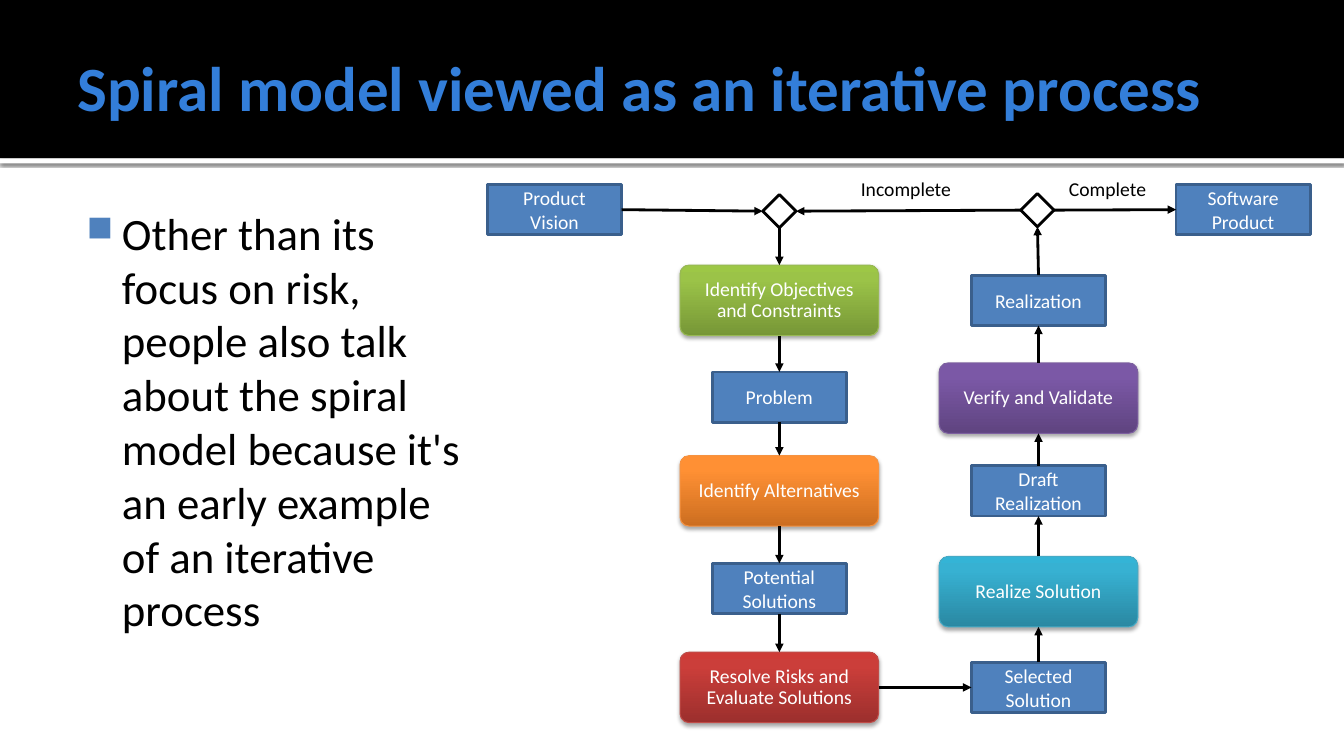
from copy import deepcopy

from lxml import etree
from pptx import Presentation
from pptx.dml.color import RGBColor
from pptx.enum.shapes import MSO_CONNECTOR, MSO_SHAPE
from pptx.enum.text import MSO_ANCHOR, PP_ALIGN
from pptx.oxml.ns import qn
from pptx.util import Inches, Pt

RECTANGLE = MSO_SHAPE.RECTANGLE
ROUNDED = MSO_SHAPE.ROUNDED_RECTANGLE
DECISION = MSO_SHAPE.FLOWCHART_DECISION
STRAIGHT = MSO_CONNECTOR.STRAIGHT
MIDDLE = MSO_ANCHOR.MIDDLE
TOP_ANCHOR = MSO_ANCHOR.TOP
CENTER = PP_ALIGN.CENTER
LEFT_ALIGN = PP_ALIGN.LEFT

BLACK = RGBColor(0x00, 0x00, 0x00)
WHITE = RGBColor(0xFF, 0xFF, 0xFF)
TITLE_BLUE = RGBColor(0x33, 0x7E, 0xD9)
STATE_BLUE = RGBColor(0x4F, 0x81, 0xBD)
STATE_EDGE = RGBColor(0x3A, 0x5F, 0x8C)


def palette(*codes):
    return [RGBColor.from_string(code) for code in codes]


GREEN = palette("779737", "9BC348", "9DC746", "98B955")
ORANGE = palette("CC6E20", "FF9034", "FF9136", "F69240")
RED = palette("9C2F2D", "CB3E3A", "CE3B37", "BF4C48")
TEAL = palette("2A88A2", "37B1D2", "34B4D6", "46AAC5")
PURPLE = palette("5F4480", "7B58A6", "7C57A8", "7D60A0")

FONT = "Calibri"
TOP, LEFT, BOTTOM, RIGHT = range(4)
STATE_SIZE = (1.33, 0.5)
ACTIVITY_SIZE = (1.97, 0.7)
DIAMOND_SIZE = (0.33, 0.33)
LEFT_AXIS, RIGHT_AXIS = 7.73, 10.3


def write(shape, text, size, color, align=CENTER, anchor=MIDDLE,
          insets=(0.1, 0.05, 0.1, 0.05), bold=False, spacing=1.0):
    frame = shape.text_frame
    frame.word_wrap = True
    frame.vertical_anchor = anchor
    (frame.margin_left, frame.margin_top,
     frame.margin_right, frame.margin_bottom) = map(Inches, insets)
    frame.text = text
    for para in frame.paragraphs:
        para.alignment = align
        para.line_spacing = spacing
        for span in para.runs:
            span.font.name = FONT
            span.font.size = Pt(size)
            span.font.bold = bold
            span.font.color.rgb = color


def add_text(page, area, text, size, color, **style):
    box = page.shapes.add_textbox(*map(Inches, area))
    write(box, text, size, color, **style)
    return box


def add_solid(page, kind, area, fill, edge=None):
    shape = page.shapes.add_shape(kind, *map(Inches, area))
    shape.shadow.inherit = False
    shape.fill.solid()
    shape.fill.fore_color.rgb = fill
    if edge is None:
        shape.line.fill.background()
    else:
        shape.line.color.rgb = edge
        shape.line.width = Pt(2)
    return shape


def add_shadow(shape, blur, distance, opacity):
    shape.shadow.inherit = False
    effects = shape.element.spPr.find(qn("a:effectLst"))
    shadow = etree.SubElement(effects, qn("a:outerShdw"), blurRad=str(Pt(blur)),
                              dist=str(Pt(distance)), dir="5400000", rotWithShape="0")
    color = etree.SubElement(shadow, qn("a:srgbClr"), val=str(BLACK))
    etree.SubElement(color, qn("a:alpha"), val=str(opacity * 1000))


def centered(axis, top, size):
    width, height = size
    return axis - width / 2, top, width, height


def add_state(page, axis, top, text):
    box = add_solid(page, RECTANGLE, centered(axis, top, STATE_SIZE), STATE_BLUE, STATE_EDGE)
    write(box, text, 14, WHITE)
    return box


def add_activity(page, axis, top, text, colors):
    box = page.shapes.add_shape(ROUNDED, *map(Inches, centered(axis, top, ACTIVITY_SIZE)))
    box.adjustments[0] = 0.13
    box.fill.gradient()
    box.fill.gradient_angle = 90
    stops = box.element.spPr.find(".//" + qn("a:gsLst"))
    stops.append(deepcopy(stops[-1]))
    for stop, position, color in zip(box.fill.gradient_stops, (0, 0.8, 1), colors):
        stop.position = position
        stop.color.rgb = color
    box.line.color.rgb = colors[-1]
    box.line.width = Pt(0.75)
    add_shadow(box, 3.1, 1.8, 35)
    write(box, text, 14, WHITE, insets=(0.12,) * 4, spacing=0.9)
    return box


def add_arrow(page, source, source_side, target, target_side):
    arrow = page.shapes.add_connector(STRAIGHT, 0, 0, 0, 0)
    arrow.begin_connect(source, source_side)
    arrow.end_connect(target, target_side)
    arrow.line.color.rgb = BLACK
    arrow.line.width = Pt(2)
    properties = arrow.element.spPr
    etree.SubElement(properties.find(qn("a:ln")), qn("a:tailEnd"), type="triangle")
    etree.SubElement(properties, qn("a:effectLst"))


def add_chain(page, steps, source_side, target_side):
    for source, target in zip(steps, steps[1:]):
        add_arrow(page, source, source_side, target, target_side)


def add_bullet(para):
    properties = para._p.get_or_add_pPr()
    properties.set("marL", str(Inches(0.48)))
    properties.set("indent", str(Inches(-0.35)))
    color = etree.SubElement(properties, qn("a:buClr"))
    etree.SubElement(color, qn("a:srgbClr"), val=str(STATE_BLUE))
    etree.SubElement(properties, qn("a:buSzPct"), val="80000")
    etree.SubElement(properties, qn("a:buChar"), char="■")


def add_heading(page):
    rule = add_solid(page, RECTANGLE, (0, 1.57, 13.33, 0.05), WHITE)
    add_shadow(rule, 2.5, 0.8, 60)
    add_solid(page, RECTANGLE, (0, 0, 13.33, 1.57), BLACK)
    add_text(page, (0.67, 0.17, 12, 1.37), "Spiral model viewed as an iterative process",
             45, TITLE_BLUE, align=LEFT_ALIGN, bold=True, insets=(0.1, 0.05, 0.05, 0.05))


def add_body(page):
    body = add_text(page, (0.67, 1.94, 4.17, 5.06),
                    "Other than its focus on risk, people also talk about the spiral "
                    "model because it's an early example of an iterative process",
                    32, BLACK, align=LEFT_ALIGN, anchor=TOP_ANCHOR,
                    insets=(0.06, 0.1, 0.1, 0.05))
    add_bullet(body.text_frame.paragraphs[0])


def add_process(page):
    vision = add_state(page, 5.5, 1.83, "Product\nVision")
    product = add_state(page, 12.33, 1.83, "Software Product")
    start = add_solid(page, DECISION, centered(LEFT_AXIS, 1.93, DIAMOND_SIZE), WHITE, BLACK)
    check = add_solid(page, DECISION, centered(10.29, 1.92, DIAMOND_SIZE), WHITE, BLACK)
    descent = [
        start,
        add_activity(page, LEFT_AXIS, 2.63, "Identify Objectives and Constraints", GREEN),
        add_state(page, LEFT_AXIS, 3.69, "Problem"),
        add_activity(page, LEFT_AXIS, 4.52, "Identify Alternatives", ORANGE),
        add_state(page, LEFT_AXIS, 5.59, "Potential Solutions"),
        add_activity(page, LEFT_AXIS, 6.47, "Resolve Risks and Evaluate Solutions", RED),
    ]
    ascent = [
        add_state(page, RIGHT_AXIS, 6.57, "Selected Solution"),
        add_activity(page, RIGHT_AXIS, 5.52, "Realize Solution", TEAL),
        add_state(page, RIGHT_AXIS, 4.62, "Draft Realization"),
        add_activity(page, RIGHT_AXIS, 3.6, "Verify and Validate", PURPLE),
        add_state(page, RIGHT_AXIS, 2.73, "Realization"),
        check,
    ]
    add_chain(page, descent, BOTTOM, TOP)
    add_chain(page, ascent, TOP, BOTTOM)
    add_arrow(page, vision, RIGHT, start, LEFT)
    add_arrow(page, descent[-1], RIGHT, ascent[0], LEFT)
    add_arrow(page, check, LEFT, start, RIGHT)
    add_arrow(page, check, RIGHT, product, LEFT)
    for left, label in ((8, "Incomplete"), (10, "Complete")):
        add_text(page, (left, 1.71, 1.97, 0.34), label, 14, BLACK, anchor=TOP_ANCHOR)


def main():
    deck = Presentation()
    deck.slide_width, deck.slide_height = Inches(13.33), Inches(7.5)
    page = deck.slides.add_slide(deck.slide_layouts[6])
    add_heading(page)
    add_body(page)
    add_process(page)
    deck.save("out.pptx")


if __name__ == "__main__":
    main()
